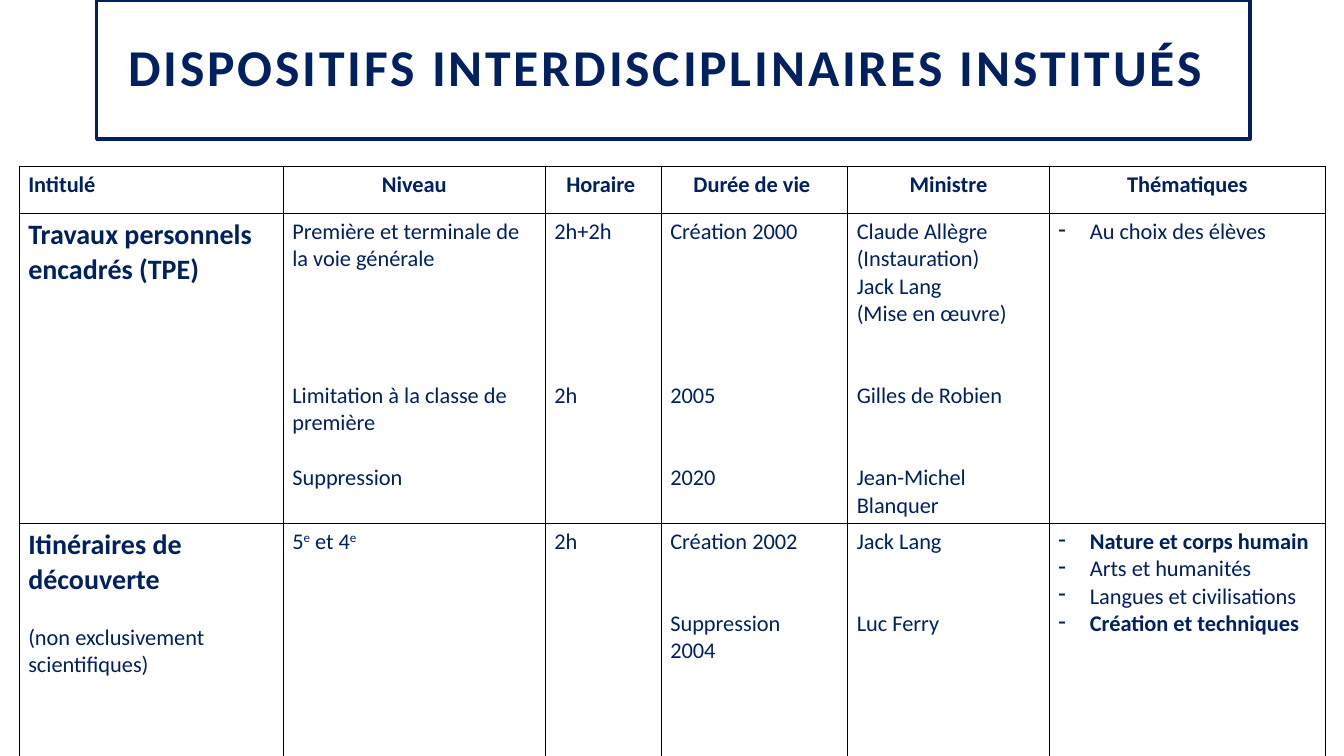
from dataclasses import dataclass

from lxml import etree
from pptx import Presentation
from pptx.dml.color import RGBColor
from pptx.enum import text
from pptx.oxml import ns
from pptx.util import Pt

NAVY, WHITE, BLACK = "002060", "FFFFFF", "000000"
FONT = "Calibri"
BODY_SIZE = 16
BODY_LINE = 19.53  # height of one body line
BULLET_INDENT = 22.5
COLUMN_WIDTHS = [188.64, 187.2, 82.8, 133.2, 144, 197.28]
ROW_HEIGHTS = [33.84, 197.28, 173.52]


@dataclass
class Line:
    """A paragraph; gap counts the free lines above, ^ encloses superscript."""
    text: str
    gap: int = 0
    size: float = BODY_SIZE
    bold: bool = False
    centred: bool = False
    bullet: bool = False


def heading(words: str) -> Line:
    return Line(words, size=20, bold=True)


def theme(words: str, bold: bool = False) -> Line:
    return Line(words, bold=bold, bullet=True)


HEADER = [[Line("Intitulé", bold=True)]] + [
    [Line(words, bold=True, centred=True)]
    for words in ("Niveau", "Horaire ", "Durée de vie ", "Ministre", "Thématiques")
]
TPE = [
    [heading("Travaux personnels encadrés (TPE)")],
    [Line("Première et terminale de la voie générale"),
     Line("Limitation à la classe de première", gap=4),
     Line("Suppression", gap=1)],
    [Line("2h+2h"), Line("2h", gap=5)],
    [Line("Création 2000"), Line("2005", gap=5), Line("2020", gap=2)],
    [Line("Claude Allègre"), Line("(Instauration)"),
     Line("Jack Lang"), Line("(Mise en œuvre)"),
     Line("Gilles de Robien", gap=2), Line("Jean-Michel Blanquer", gap=2)],
    [theme("Au choix des élèves")],
]
ITINERAIRES = [
    [heading("Itinéraires de découverte"),
     Line("(non exclusivement scientifiques)", gap=1)],
    [Line("5^e^ et 4^e^")],
    [Line("2h")],
    [Line("Création 2002"), Line("Suppression", gap=2), Line("2004")],
    [Line("Jack Lang"), Line("Luc Ferry", gap=2)],
    [theme("Nature et corps humain", bold=True), theme("Arts et humanités"),
     theme("Langues et civilisations"), theme("Création et techniques", bold=True)],
]


def colour(value: str) -> RGBColor:
    return RGBColor.from_string(value)


def format_run(run, size: float, bold: bool) -> None:
    run.font.name = FONT
    run.font.size = Pt(size)
    run.font.bold = bold
    run.font.color.rgb = colour(NAVY)


def write_line(paragraph, line: Line) -> None:
    paragraph.alignment = text.PP_ALIGN.CENTER if line.centred else text.PP_ALIGN.LEFT
    paragraph.space_before = Pt(line.gap * BODY_LINE)
    for index, part in enumerate(line.text.split("^")):
        if not part:
            continue
        run = paragraph.add_run()
        run.text = part
        format_run(run, line.size, line.bold)
        if index % 2:
            run._r.get_or_add_rPr().set("baseline", "30000")
    if line.bullet:
        properties = paragraph._p.get_or_add_pPr()
        properties.set("marL", str(Pt(BULLET_INDENT)))
        properties.set("indent", str(-Pt(BULLET_INDENT)))
        etree.SubElement(properties, ns.qn("a:buChar"), char="-")


def add_borders(cell) -> None:
    properties = cell._tc.get_or_add_tcPr()
    for side in ("a:lnL", "a:lnR", "a:lnT", "a:lnB"):
        border = etree.SubElement(properties, ns.qn(side), w=str(Pt(1)))
        fill = etree.SubElement(border, ns.qn("a:solidFill"))
        etree.SubElement(fill, ns.qn("a:srgbClr"), val=BLACK)


def fill_cell(cell, lines: list[Line]) -> None:
    cell.margin_left = cell.margin_right = Pt(6.5)
    cell.margin_top = cell.margin_bottom = Pt(3.2)
    add_borders(cell)
    cell.fill.background()
    frame = cell.text_frame
    for index, line in enumerate(lines):
        write_line(frame.add_paragraph() if index else frame.paragraphs[0], line)


def add_title(slide) -> None:
    title = slide.shapes.title
    title.left, title.top, title.width, title.height = Pt(69.12), Pt(0), Pt(823.68), Pt(99.36)
    title.fill.solid()
    title.fill.fore_color.rgb = colour(WHITE)
    title.line.color.rgb = colour(NAVY)
    title.line.width = Pt(2.5)
    frame = title.text_frame
    frame.text = "DISPOSITIFS INTERDISCIPLINAIRES INSTITUÉS "
    frame.auto_size = text.MSO_AUTO_SIZE.NONE
    frame.word_wrap = True
    frame.vertical_anchor = text.MSO_ANCHOR.MIDDLE
    frame.margin_left = frame.margin_right = Pt(14.4)
    frame.margin_top = frame.margin_bottom = Pt(14.4)
    paragraph = frame.paragraphs[0]
    paragraph.alignment = text.PP_ALIGN.CENTER
    paragraph.line_spacing = 0.9
    run = paragraph.runs[0]
    format_run(run, 36.9, True)
    run._r.get_or_add_rPr().set("spc", "200")


def add_programme_table(slide) -> None:
    table = slide.shapes.add_table(
        len(ROW_HEIGHTS), len(COLUMN_WIDTHS), Pt(13.68), Pt(118.8),
        Pt(sum(COLUMN_WIDTHS)), Pt(sum(ROW_HEIGHTS))).table
    table.first_row = table.horz_banding = False
    for column, width in zip(table.columns, COLUMN_WIDTHS):
        column.width = Pt(width)
    for row, height, contents in zip(table.rows, ROW_HEIGHTS, (HEADER, TPE, ITINERAIRES)):
        row.height = Pt(height)
        for cell, lines in zip(row.cells, contents):
            fill_cell(cell, lines)


def main() -> None:
    presentation = Presentation()
    presentation.slide_width, presentation.slide_height = Pt(960), Pt(540)
    slide = presentation.slides.add_slide(presentation.slide_layouts[5])
    add_title(slide)
    add_programme_table(slide)
    presentation.save("out.pptx")


if __name__ == "__main__":
    main()
